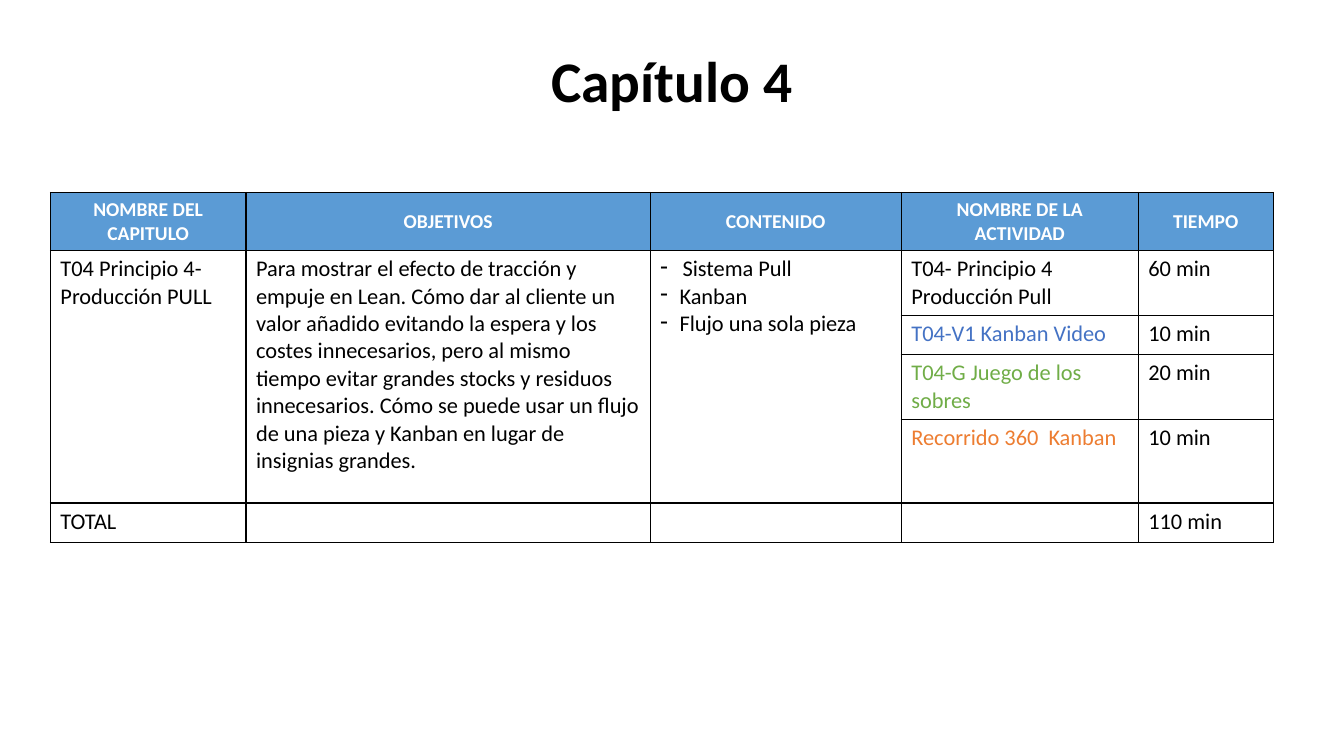
from lxml import etree
from pptx import Presentation
from pptx.dml.color import RGBColor
from pptx.enum.text import MSO_ANCHOR, PP_ALIGN
from pptx.oxml.ns import qn
from pptx.util import Inches, Pt

CENTER = PP_ALIGN.CENTER
LEFT = PP_ALIGN.LEFT
MIDDLE = MSO_ANCHOR.MIDDLE
TOP = MSO_ANCHOR.TOP

BLACK = RGBColor(0, 0, 0)
WHITE = RGBColor(0xFF, 0xFF, 0xFF)
HEADER_BLUE = RGBColor(0x5B, 0x9B, 0xD5)
VIDEO_BLUE = RGBColor(0x44, 0x72, 0xC4)
GAME_GREEN = RGBColor(0x70, 0xAD, 0x47)
TOUR_ORANGE = RGBColor(0xED, 0x7D, 0x31)
FONT = "Calibri"

COLUMN_WIDTHS = [1.94, 4.01, 2.49, 2.35, 1.34]
ROW_HEIGHTS = [0.57, 0.64, 0.39, 0.64, 0.83, 0.39]
HEADINGS = ["NOMBRE DEL CAPITULO", "OBJETIVOS", "CONTENIDO",
            "NOMBRE DE LA ACTIVIDAD", "TIEMPO"]
CHAPTER = "T04 Principio 4- Producción PULL"
OBJECTIVES = (
    "Para mostrar el efecto de tracción y empuje en Lean. Cómo dar al cliente "
    "un valor añadido evitando la espera y los costes innecesarios, pero al "
    "mismo tiempo evitar grandes stocks y residuos innecesarios. Cómo se puede "
    "usar un flujo de una pieza y Kanban en lugar de insignias grandes."
)
CONTENTS = [("Sistema Pull", 0.22), ("Kanban", 0.19), ("Flujo una sola pieza", 0.19)]
ACTIVITIES = [
    ("T04- Principio 4\nProducción Pull", "60 min", BLACK),
    ("T04-V1 Kanban Video", "10 min", VIDEO_BLUE),
    ("T04-G Juego de los sobres", "20 min", GAME_GREEN),
    ("Recorrido 360  Kanban", "10 min", TOUR_ORANGE),
]
TOTAL_ROW = ["TOTAL", "", "", "", "110 min"]


def style_text(frame, size, color, bold=False, align=LEFT):
    """Format every paragraph and run of a text frame."""
    for paragraph in frame.paragraphs:
        paragraph.alignment = align
        for run in paragraph.runs:
            run.font.name = FONT
            run.font.size = Pt(size)
            run.font.bold = bold
            run.font.color.rgb = color
        if not paragraph.runs:
            ending = etree.SubElement(paragraph._p, qn("a:endParaRPr"))
            ending.set("sz", str(size * 100))


def add_borders(cell):
    """Draw a thin black line on the four sides of a cell."""
    properties = cell._tc.get_or_add_tcPr()
    for side in ("lnL", "lnR", "lnT", "lnB"):
        line = etree.SubElement(properties, qn(f"a:{side}"), w=str(Pt(1)))
        fill = etree.SubElement(line, qn("a:solidFill"))
        etree.SubElement(fill, qn("a:srgbClr"), val=str(BLACK))


def fill_cell(cell, text, color=BLACK):
    """Write a body cell."""
    cell.text_frame.text = text
    cell.vertical_anchor = TOP
    style_text(cell.text_frame, 16, color)


def fill_header(cell, text):
    """Write a column heading."""
    cell.text_frame.text = text
    cell.vertical_anchor = MIDDLE
    cell.fill.fore_color.rgb = HEADER_BLUE
    style_text(cell.text_frame, 14, WHITE, True, CENTER)


def add_dashes(frame, indents):
    """Give each paragraph a dash with a hanging indent."""
    for paragraph, indent in zip(frame.paragraphs, indents):
        properties = paragraph._p.get_or_add_pPr()
        properties.set("marL", str(Inches(indent)))
        properties.set("indent", str(-Inches(indent)))
        etree.SubElement(properties, qn("a:buChar"), char="-")


def add_grid(slide):
    """Add the empty bordered table with its column and row sizes."""
    table = slide.shapes.add_table(
        len(ROW_HEIGHTS), len(COLUMN_WIDTHS), Inches(0.5), Inches(1.91),
        Inches(sum(COLUMN_WIDTHS)), Inches(sum(ROW_HEIGHTS))).table
    table.first_row = False
    table.horz_banding = False
    for column, width in zip(table.columns, COLUMN_WIDTHS):
        column.width = Inches(width)
    for row, height in zip(table.rows, ROW_HEIGHTS):
        row.height = Inches(height)
    for cell in table.iter_cells():
        add_borders(cell)
        cell.fill.solid()
        cell.fill.fore_color.rgb = WHITE
    return table


def add_chapter_table(slide):
    """Add the chapter plan with its activities and total time."""
    table = add_grid(slide)
    for column, heading in enumerate(HEADINGS):
        fill_header(table.cell(0, column), heading)
    topics = "\n".join(topic for topic, _ in CONTENTS)
    for column, text in enumerate([CHAPTER, OBJECTIVES, topics]):
        table.cell(1, column).merge(table.cell(len(ACTIVITIES), column))
        fill_cell(table.cell(1, column), text)
    add_dashes(table.cell(1, 2).text_frame, [indent for _, indent in CONTENTS])
    for row, (activity, duration, color) in enumerate(ACTIVITIES, start=1):
        fill_cell(table.cell(row, 3), activity, color)
        fill_cell(table.cell(row, 4), duration)
    for column, text in enumerate(TOTAL_ROW):
        fill_cell(table.cell(len(ROW_HEIGHTS) - 1, column), text)


def add_title(slide, text):
    """Add the centred chapter title."""
    frame = slide.shapes.add_textbox(
        Inches(0), Inches(0.48), Inches(13.33), Inches(1.31)).text_frame
    frame.word_wrap = True
    frame.text = text
    frame.paragraphs[0].line_spacing = 0.9
    style_text(frame, 41, BLACK, True, CENTER)


def main():
    """Build and save the chapter slide."""
    presentation = Presentation()
    presentation.slide_width = Inches(13.33)
    presentation.slide_height = Inches(7.5)
    slide = presentation.slides.add_slide(presentation.slide_layouts[6])
    add_chapter_table(slide)
    add_title(slide, "Capítulo 4")
    presentation.save("out.pptx")


if __name__ == "__main__":
    main()
